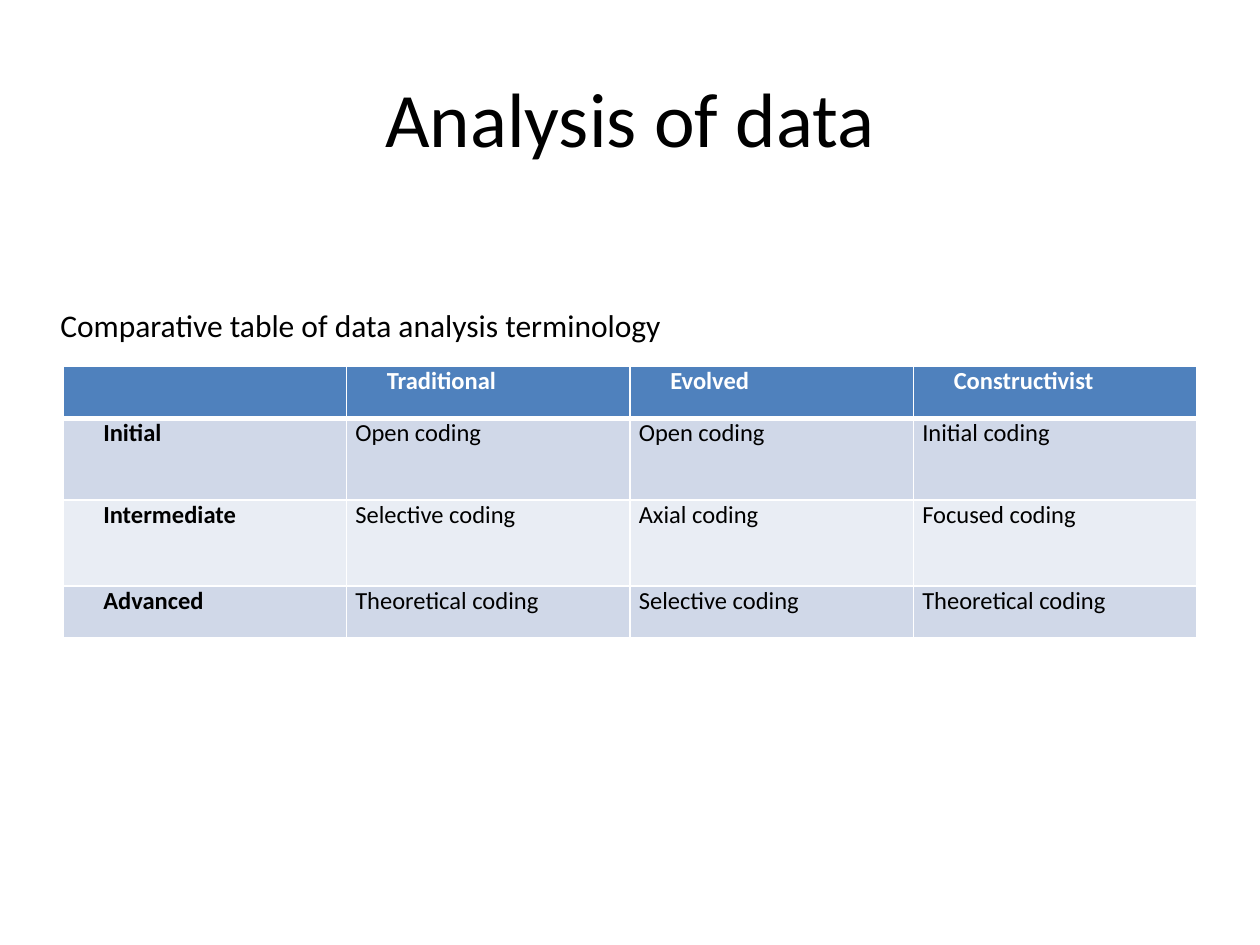
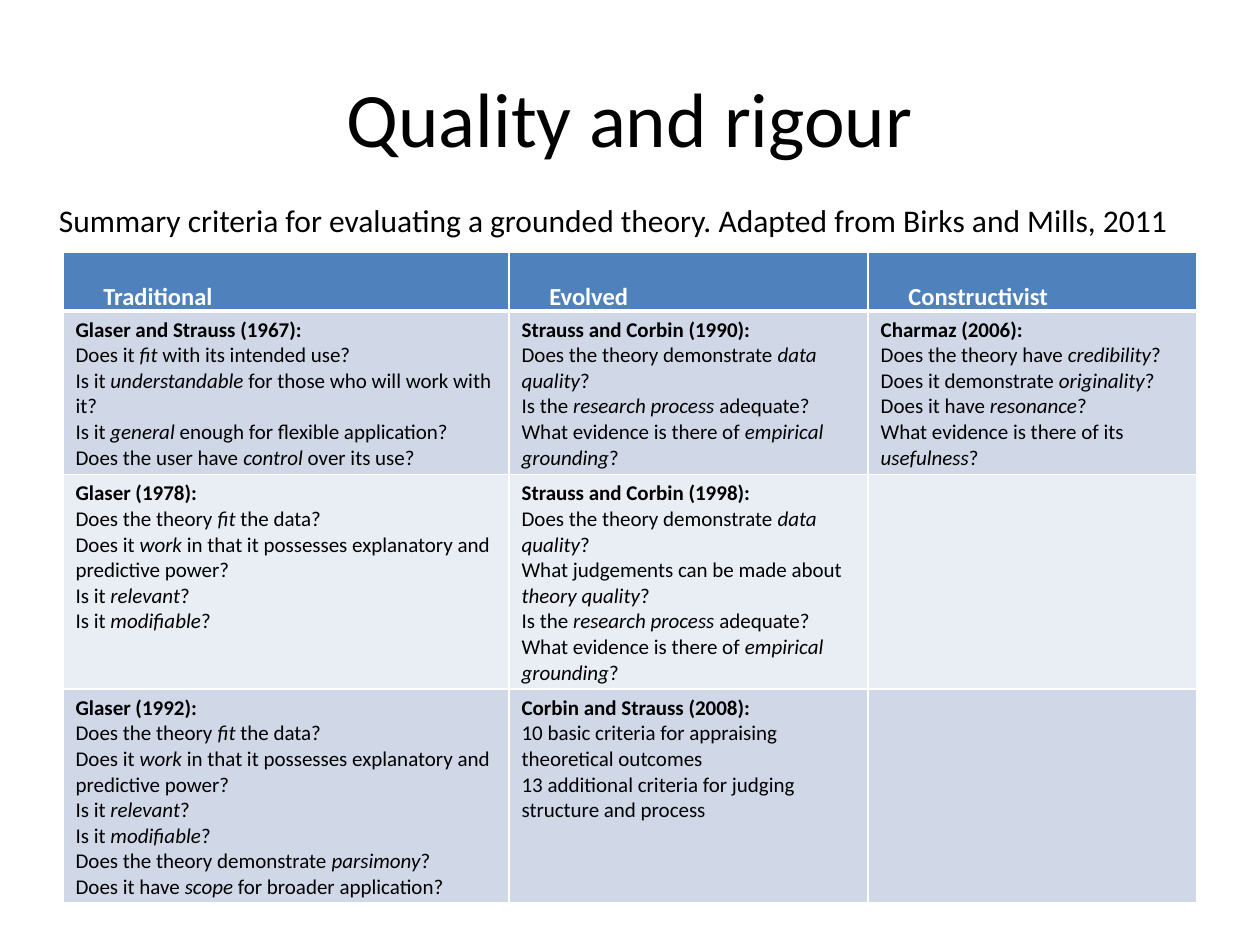
import pptx
import pptx.dml.color
import pptx.enum.text
import pptx.oxml.ns
import pptx.util
from lxml import etree

Inches = pptx.util.Inches
Pt = pptx.util.Pt

FONT = "Calibri"
COLORS = {
    "text": "000000",
    "white": "FFFFFF",
    "header": "4F81BD",
    "odd_row": "D0D8E8",
    "even_row": "E9EDF4",
}


def write_text(text_frame, text, size, color="text", bold_first=False):
    """Write one paragraph per line; words between asterisks become italic."""
    text_frame.word_wrap = True
    for index, line in enumerate(text.split("\n")):
        paragraph = text_frame.paragraphs[0] if index == 0 else text_frame.add_paragraph()
        for part_index, part in enumerate(line.split("*")):
            run = paragraph.add_run()
            run.text = part
            run.font.name = FONT
            run.font.size = Pt(size)
            run.font.bold = bold_first and index == 0
            run.font.italic = part_index % 2 == 1
            run.font.color.rgb = pptx.dml.color.RGBColor.from_string(COLORS[color])


def style_cell(cell, row_index):
    """Draw the white borders and the banded fill of a cell."""
    properties = cell._tc.get_or_add_tcPr()
    for side in ("lnL", "lnR", "lnT", "lnB"):
        thick = (row_index, side) in ((0, "lnB"), (1, "lnT"))
        line = etree.SubElement(properties, pptx.oxml.ns.qn("a:" + side), w=str(Pt(3 if thick else 1)))
        line_fill = etree.SubElement(line, pptx.oxml.ns.qn("a:solidFill"))
        etree.SubElement(line_fill, pptx.oxml.ns.qn("a:srgbClr"), val=COLORS["white"])
    band = "header" if row_index == 0 else "odd_row" if row_index % 2 else "even_row"
    cell.fill.solid()
    cell.fill.fore_color.rgb = pptx.dml.color.RGBColor.from_string(COLORS[band])


# Evaluation criteria that several authors share
GLASER_CRITERIA = """Does the theory *fit* the data?
Does it *work* in that it possesses explanatory and predictive power?
Is it *relevant*?
Is it *modifiable*?"""
DATA_QUALITY = "Does the theory demonstrate *data quality*?"
PROCESS_AND_GROUNDING = """Is the *research process* adequate?
What evidence is there of *empirical grounding*?"""

APPROACHES = ["Traditional", "Evolved", "Constructivist"]

SLIDES = [
    {
        "title": "Analysis of data",
        "caption": "Comparative table of data analysis terminology",
        "caption_box": (0.38, 2.38, 5.69, 0.4),
        "table_top": 2.91,
        "table_height": 2.14,
        "columns": [2.25] * 4,
        "row_heights": [0.41, 0.65, 0.68, 0.41],
        "body_size": 14,
        "has_stages": True,
        "rows": [
            [""] + APPROACHES,
            ["Initial", "Open coding", "Open coding", "Initial coding"],
            ["Intermediate", "Selective coding", "Axial coding", "Focused coding"],
            ["Advanced", "Theoretical coding", "Selective coding", "Theoretical coding"],
        ],
    },
    {
        "title": "Quality and rigour",
        "caption": "Summary criteria for evaluating a grounded theory. Adapted from Birks and Mills, 2011",
        "caption_box": (0.37, 1.55, 9.13, 0.4),
        "table_top": 2,
        "table_height": 5.17,
        "columns": [3.54, 2.85, 2.61],
        "row_heights": [0.41] * 4,
        "body_size": 12,
        "has_stages": False,
        "rows": [
            APPROACHES,
            [
                """Glaser and Strauss (1967):
Does it *fit* with its intended use?
Is it *understandable *for those who will work with it?
Is it *general* enough for flexible application?
Does the user have *control* over its use?""",
                f"Strauss and Corbin (1990):\n{DATA_QUALITY}\n{PROCESS_AND_GROUNDING}",
                """Charmaz (2006):
Does the theory have *credibility*?
Does it demonstrate *originality*?
Does it have *resonance*?
What evidence is there of its *usefulness*?""",
            ],
            [
                f"Glaser (1978):\n{GLASER_CRITERIA}",
                f"""Strauss and Corbin (1998):
{DATA_QUALITY}
What judgements can be made about *theory quality*?
{PROCESS_AND_GROUNDING}""",
                "",
            ],
            [
                f"""Glaser (1992):
{GLASER_CRITERIA}
Does the theory demonstrate *parsimony*?
Does it have *scope* for broader application?""",
                """Corbin and Strauss (2008):
10 basic criteria for appraising theoretical outcomes
13 additional criteria for judging structure and process""",
                "",
            ],
        ],
    },
]

presentation = pptx.Presentation()
presentation.slide_width = Inches(10)
presentation.slide_height = Inches(7.5)

for content in SLIDES:
    slide = presentation.slides.add_slide(presentation.slide_layouts[6])

    # Title
    title = slide.shapes.add_textbox(Inches(0.5), Inches(0.3), Inches(9), Inches(1.25))
    write_text(title.text_frame, content["title"], 44)
    title.text_frame.vertical_anchor = pptx.enum.text.MSO_ANCHOR.MIDDLE
    title.text_frame.paragraphs[0].alignment = pptx.enum.text.PP_ALIGN.CENTER

    # Table
    rows = content["rows"]
    has_stages = content["has_stages"]
    table_shape = slide.shapes.add_table(
        len(rows), len(rows[0]), Inches(0.5), Inches(content["table_top"]),
        Inches(9), Inches(content["table_height"]))
    table = table_shape.table
    for column, width in zip(table.columns, content["columns"]):
        column.width = Inches(width)
    for row, height in zip(table.rows, content["row_heights"]):
        row.height = Inches(height)
    table_shape.height = Inches(content["table_height"])

    for row_index, row in enumerate(rows):
        for column_index, text in enumerate(row):
            cell = table.cell(row_index, column_index)
            style_cell(cell, row_index)
            if not text:
                continue
            is_header = row_index == 0
            is_stage = has_stages and column_index == 0
            write_text(cell.text_frame, text, 14 if is_header else content["body_size"],
                       "white" if is_header else "text",
                       bold_first=is_header or is_stage or not has_stages)
            paragraph = cell.text_frame.paragraphs[0]
            if is_header or has_stages:
                cell.margin_left = cell.margin_right = Inches(0.07)
                cell.margin_top = cell.margin_bottom = 0
            if is_header or is_stage:
                paragraph._p.get_or_add_pPr().set("indent", str(Inches(0.25)))
            if has_stages:
                paragraph.space_after = Pt(6)
            elif is_header:
                paragraph.line_spacing = 2.0

    # Table caption
    caption = slide.shapes.add_textbox(*map(Inches, content["caption_box"]))
    write_text(caption.text_frame, content["caption"], 18)

presentation.save("out.pptx")
